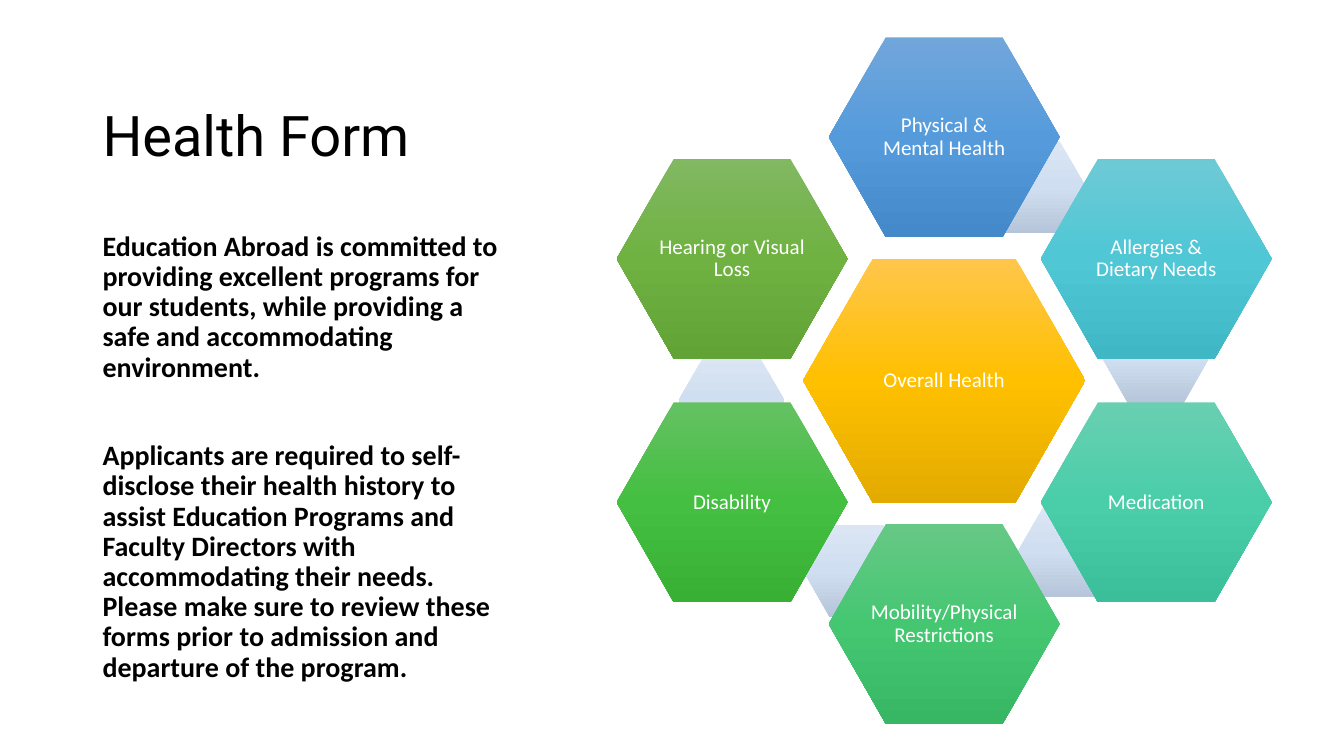
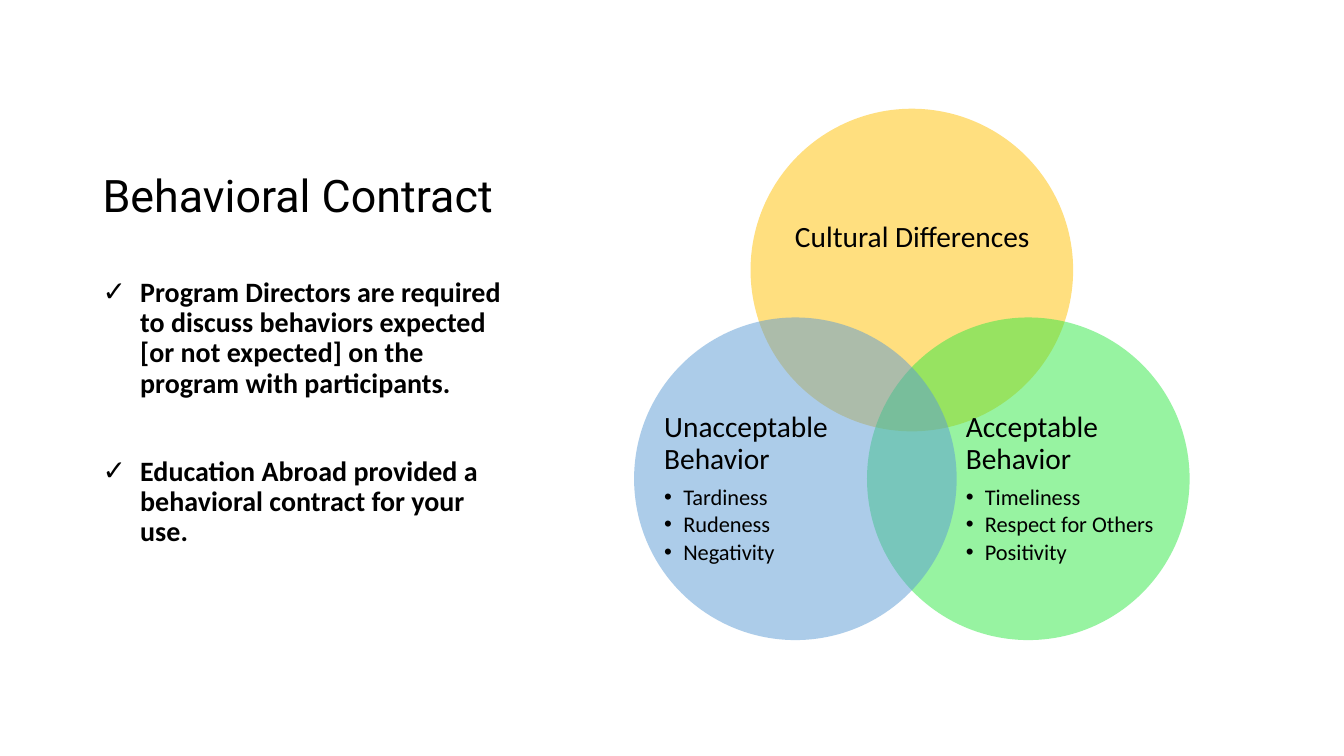
from copy import deepcopy

from lxml import etree
from pptx import Presentation
from pptx import util as u
from pptx.dml.color import RGBColor
from pptx.enum import shapes, text
from pptx.oxml.ns import qn

BLACK, WHITE = "000000", "FFFFFF"
TITLE_FONT, BODY_FONT = "Roboto", "Calibri"
LEFT, COLUMN = 2.33, 10.92  # text column, in cm

# Light, middle and dark stop of each hexagon
LINK = ("DBE5F3", "D0DEF1", "B6C5D9")
CENTRE = ("Overall Health", ("FFC64B", "FFC000", "E3AB00"))
RING = [  # label, gradient, place in steps from the centre
    ("Physical & Mental Health", ("71A6DB", "559BDB", "448ACA"), (0, -2)),
    ("Allergies & Dietary Needs", ("6DCAD5", "4FC7D5", "3FB7C4"), (1, -1)),
    ("Medication", ("69CFB1", "4ACEAA", "3BBE9A"), (1, 1)),
    ("Mobility/Physical Restrictions", ("66C885", "45C772", "37B764"), (0, 2)),
    ("Disability", ("64C162", "44BF41", "37B034"), (-1, 1)),
    ("Hearing or Visual Loss", ("81B861", "6FB242", "62A336"), (-1, -1)),
]
LINK_OFFSETS = [(2.24, -4.87), (5.33, -0.55), (3.2, 4.29), (-2.21, 4.8), (-5.36, 0.5)]


def rgb(value):
    return RGBColor.from_string(value)


def cm(*values):
    return [u.Cm(v) for v in values]


def set_all(obj, formats):
    for name, value in formats.items():
        setattr(obj, name, value)


def move(sp, box):
    set_all(sp, dict(zip(("left", "top", "width", "height"), cm(*box))))


def write(p, content, size, font=BODY_FONT, color=BLACK, bold=False, **formats):
    """Fill a paragraph with one run; formats are paragraph attributes."""
    set_all(p, {"line_spacing": 0.9, "space_before": u.Pt(0), **formats})
    r = p.add_run()
    r.text = content
    set_all(r.font, {"name": font, "size": u.Pt(size), "bold": bold})
    r.font.color.rgb = rgb(color)


def set_bullet(p, char=None, indent=0):
    """Give the paragraph a hanging bullet, or none without a char."""
    pPr = p._p.get_or_add_pPr()
    pPr.set("marL", str(u.Cm(indent)))
    pPr.set("indent", str(-u.Cm(indent)))
    if char:
        etree.SubElement(pPr, qn("a:buFont")).set("typeface", "Arial")
        etree.SubElement(pPr, qn("a:buChar")).set("char", char)
    else:
        etree.SubElement(pPr, qn("a:buNone"))


def paragraphs(tf, count):
    return [tf.paragraphs[0]] + [tf.add_paragraph() for _ in range(count - 1)]


def set_frame(tf, anchor, inset=None):
    set_all(tf, {"word_wrap": True, "auto_size": text.MSO_AUTO_SIZE.NONE,
                 "vertical_anchor": anchor})
    if inset is not None:
        for side in ("left", "top", "right", "bottom"):
            setattr(tf, "margin_" + side, u.Cm(inset))


def add_plain_shape(s, kind, box):
    sp = s.shapes.add_shape(kind, *cm(*box))
    sp.shadow.inherit = False
    sp.line.fill.background()
    return sp


def add_text_slide(prs, title, size, anchor, body, top, height, char=None, indent=0):
    """Add a slide with the title and body column on the left."""
    s = prs.slides.add_slide(prs.slide_layouts[1])
    heading, content = s.placeholders[0], s.placeholders[1]
    move(heading, (LEFT, 1.27, COLUMN, 4.45))
    set_frame(heading.text_frame, anchor)
    write(heading.text_frame.paragraphs[0], title, size, TITLE_FONT,
          alignment=text.PP_ALIGN.LEFT)
    move(content, (LEFT, top, COLUMN, height))
    set_frame(content.text_frame, text.MSO_ANCHOR.TOP)
    for i, p in enumerate(paragraphs(content.text_frame, len(body))):
        set_bullet(p, char, indent)
        write(p, body[i], 20, bold=True, space_before=u.Pt(41.5 if i else 0))
    return s


def fill_gradient(sp, colors):
    """Spread three colours evenly from top to bottom."""
    sp.fill.gradient()
    sp.fill.gradient_angle = 270
    stops = sp.element.spPr.find(".//" + qn("a:gsLst"))
    stops.append(deepcopy(stops[0]))
    for i, stop in enumerate(sp.fill.gradient_stops):
        stop.position = i / 2
        stop.color.rgb = rgb(colors[i])


def add_hexagon(s, cx, cy, size, colors, label=None):
    w, h = size
    sp = add_plain_shape(s, shapes.MSO_SHAPE.HEXAGON, (cx - w / 2, cy - h / 2, w, h))
    sp.adjustments[0] = 0.286
    fill_gradient(sp, colors)
    if label:
        set_frame(sp.text_frame, text.MSO_ANCHOR.MIDDLE, 0.05)
        write(sp.text_frame.paragraphs[0], label, 15, color=WHITE,
              alignment=text.PP_ALIGN.CENTER)


def add_hexagon_ring(s, box):
    x, y, w, h = box
    cx, cy = x + w / 2, y + h / 2
    outer = (5.82, 5.03)
    step_x, step_y = (w - outer[0]) / 2, (h - outer[1]) / 4
    for dx, dy in LINK_OFFSETS:
        add_hexagon(s, cx + dx, cy + dy, (2.67, 2.31), LINK)
    label, colors = CENTRE
    add_hexagon(s, cx, cy, (7.11, 6.15), colors, label)
    for label, colors, (i, j) in RING:
        add_hexagon(s, cx + i * step_x, cy + j * step_y, outer, colors, label)


def add_circle(s, box, color):
    sp = add_plain_shape(s, shapes.MSO_SHAPE.OVAL, box)
    sp.fill.solid()
    sp.fill.fore_color.rgb = rgb(color)
    clr = sp.element.spPr.find(".//" + qn("a:srgbClr"))
    etree.SubElement(clr, qn("a:alpha")).set("val", "50000")


def add_circle_text(s, box, heading, items, align):
    tf = s.shapes.add_textbox(*cm(*box)).text_frame
    set_frame(tf, text.MSO_ANCHOR.MIDDLE, 0)
    first, *rest = paragraphs(tf, 1 + len(items))
    write(first, heading, 21, alignment=align, space_after=u.Pt(7 if items else 0))
    for p, item in zip(rest, items):
        set_bullet(p, "•", 0.48)
        write(p, item, 16, space_after=u.Pt(2.4))


def add_venn(s, box):
    x, y, w, h = box
    d = 8.13
    low = y + h - d
    left, center = text.PP_ALIGN.LEFT, text.PP_ALIGN.CENTER
    circles = [  # corner, colour, text box inside the circle, wording
        (x + (w - d) / 2, y, "FFC000", (1.09, 1.42, 5.97, 3.66),
         "Cultural Differences", [], center),
        (x + w - d, low, "30E845", (2.49, 2.08, 4.88, 4.47),
         "Acceptable Behavior", ["Timeliness", "Respect for Others", "Positivity"], left),
        (x, low, "5B9BD5", (0.76, 2.08, 4.88, 4.47),
         "Unacceptable Behavior", ["Tardiness", "Rudeness", "Negativity"], left),
    ]
    for cx, cy, color, *_ in circles:
        add_circle(s, (cx, cy, d, d), color)
    for cx, cy, _, (dx, dy, tw, th), heading, items, align in circles:
        add_circle_text(s, (cx + dx, cy + dy, tw, th), heading, items, align)


def main():
    prs = Presentation()
    prs.slide_width, prs.slide_height = cm(33.87, 19.05)
    health = add_text_slide(
        prs, "Health Form", 40, text.MSO_ANCHOR.MIDDLE,
        ["Education Abroad is committed to providing excellent programs for our "
         "students, while providing a safe and accommodating environment.",
         "Applicants are required to self-disclose their health history to assist "
         "Education Programs and Faculty Directors with accommodating their needs. "
         "Please make sure to review these forms prior to admission and departure "
         "of the program."],
        top=5.72, height=12.27)
    add_hexagon_ring(health, (15.54, 0.94, 16.51, 17.3))
    contract = add_text_slide(
        prs, "Behavioral Contract", 32, text.MSO_ANCHOR.BOTTOM,
        ["Program Directors are required to discuss behaviors expected "
         "[or not expected] on the program with participants.",
         "Education Abroad provided a behavioral contract for your use."],
        top=6.88, height=9.4, char="✓", indent=0.95)
    add_venn(contract, (15.98, 2.74, 14, 13.39))
    prs.save("out.pptx")


if __name__ == "__main__":
    main()
